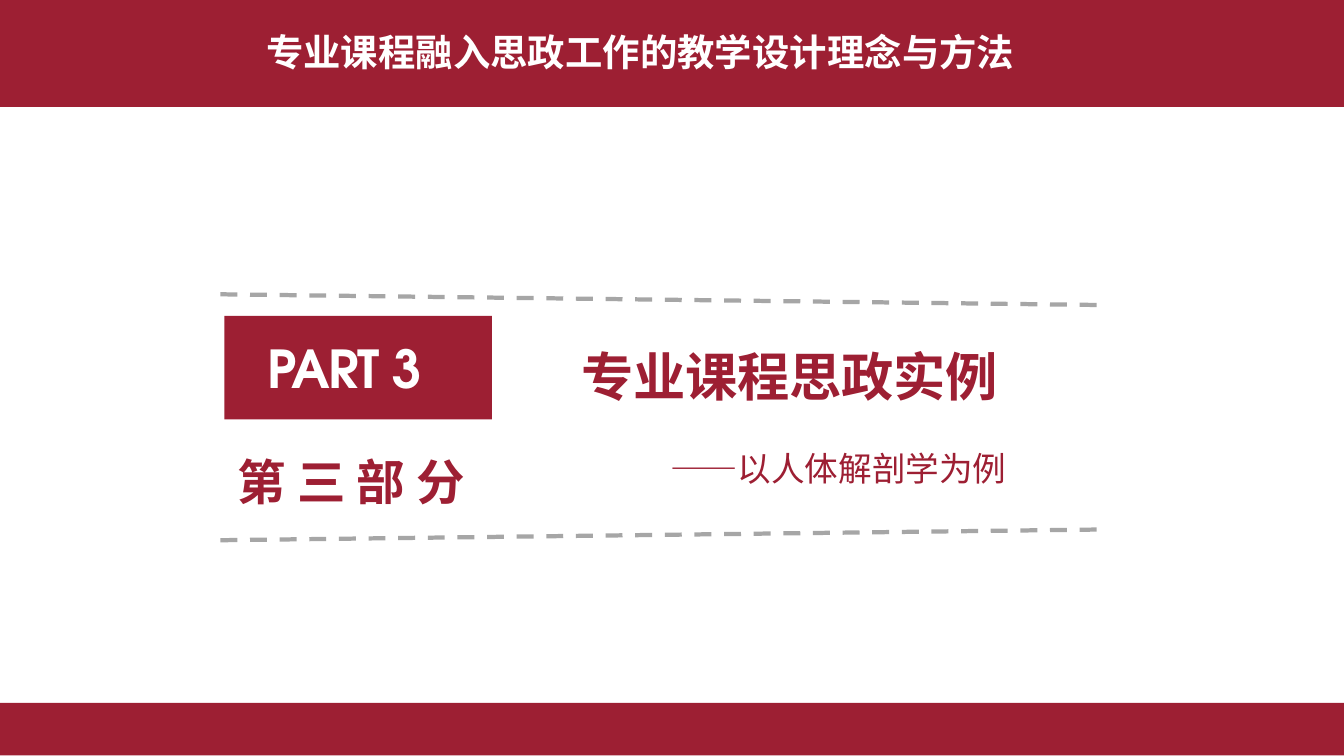
from dataclasses import dataclass

from lxml import etree
from pptx import Presentation
from pptx.dml.color import RGBColor
from pptx.enum.dml import MSO_LINE
from pptx.enum.shapes import MSO_CONNECTOR, MSO_SHAPE
from pptx.enum.text import MSO_ANCHOR, MSO_AUTO_SIZE, PP_ALIGN
from pptx.oxml.ns import qn
from pptx.util import Inches, Pt

DASH = MSO_LINE.DASH
STRAIGHT = MSO_CONNECTOR.STRAIGHT
RECTANGLE = MSO_SHAPE.RECTANGLE
TOP = MSO_ANCHOR.TOP
GROW = MSO_AUTO_SIZE.SHAPE_TO_FIT_TEXT
FIXED = MSO_AUTO_SIZE.NONE
LEFT = PP_ALIGN.LEFT
TITLE_ONLY = 5


@dataclass(frozen=True)
class Theme:
    """Colours, fonts and type sizes of the deck."""

    crimson: RGBColor = RGBColor(0x9D, 0x1F, 0x33)
    white: RGBColor = RGBColor(0xFF, 0xFF, 0xFF)
    grey: RGBColor = RGBColor(0xA6, 0xA6, 0xA6)
    chinese: str = "Noto Sans CJK SC"
    latin: str = "TeX Gyre Adventor"
    header: Pt = Pt(20)
    heading: Pt = Pt(28)
    section: Pt = Pt(26)
    subtitle: Pt = Pt(18)


THEME = Theme()


def apply_format(target, values):
    """Set each attribute of the target from a dict."""
    for name, value in values.items():
        setattr(target, name, value)


def place(shape, left, top, width, height):
    """Position and size a shape in inches."""
    sides = dict(left=left, top=top, width=width, height=height)
    apply_format(shape, {name: Inches(value) for name, value in sides.items()})


def add_band(page, top, height, outline=None):
    """Add a full-width crimson band, or only its outline."""
    band = page.shapes.add_shape(
        RECTANGLE, 0, Inches(top), Inches(10), Inches(height))
    band.shadow.inherit = False
    if outline:
        band.fill.background()
        band.line.color.rgb = THEME.crimson
        band.line.width = outline
    else:
        band.fill.solid()
        band.fill.fore_color.rgb = THEME.crimson
        band.line.fill.background()


def add_dashed_rule(page, start_y, end_y):
    """Add a slightly sloping dashed grey line."""
    rule = page.shapes.add_connector(
        STRAIGHT, Inches(1.64), Inches(start_y), Inches(8.2), Inches(end_y))
    rule.line.color.rgb = THEME.grey
    apply_format(rule.line, dict(width=Pt(2.28), dash_style=DASH))
    etree.SubElement(rule._element.spPr, qn("a:effectLst"))


def prepare_frame(frame, top_inset=0.01, sizing=GROW):
    """Give a text frame its insets, wrapping and anchor."""
    apply_format(frame, dict(
        margin_left=0, margin_right=0, margin_bottom=0,
        margin_top=Inches(top_inset), word_wrap=True,
        vertical_anchor=TOP, auto_size=sizing))


def write_line(para, spans, size, color, font=THEME.chinese, bold=True,
               indent=0.01, before=1):
    """Write (text, tracking) spans into one paragraph."""
    apply_format(para, dict(alignment=LEFT, space_before=Pt(before)))
    properties = para._p.get_or_add_pPr()
    properties.set("marL", str(Inches(indent)))
    properties.set("indent", "0")
    for text, tracking in spans:
        span = para.add_run()
        span.text = text
        apply_format(span.font, dict(name=font, size=size, bold=bold))
        span.font.color.rgb = color
        run_properties = span.font._element
        run_properties.set("spc", str(round(tracking * 100)))
        etree.SubElement(run_properties, qn("a:ea"), typeface=font)


def add_text(page, bounds):
    """Add a text box and return its frame."""
    box = page.shapes.add_textbox(0, 0, 0, 0)
    prepare_frame(box.text_frame)
    place(box, *bounds)
    return box.text_frame


def fill_title(page):
    """Turn the title placeholder into the crimson part label."""
    title = page.shapes.title
    place(title, 1.67, 2.35, 1.99, 0.77)
    title.fill.solid()
    title.fill.fore_color.rgb = THEME.crimson
    prepare_frame(title.text_frame, 0.15, FIXED)
    write_line(title.text_frame.paragraphs[0], [("PART ", -0.9), ("3", -0.1)],
               THEME.heading, THEME.white, THEME.latin,
               indent=0.32, before=10.5)


def main():
    """Build the section slide and save it."""
    deck = Presentation()
    width = Inches(10)
    apply_format(deck, dict(slide_width=width, slide_height=width * 9 // 16))
    page = deck.slides.add_slide(deck.slide_layouts[TITLE_ONLY])

    add_band(page, 5.23, 0.39)
    for outline in (None, Pt(2.04)):
        add_band(page, 0, 0.78, outline)
    add_dashed_rule(page, 4.02, 3.94)
    add_dashed_rule(page, 2.19, 2.27)
    fill_title(page)

    header = add_text(page, (1.97, 0.21, 5.59, 0.36))
    write_line(header.paragraphs[0],
               [("专业课程融入思政工作", 0), ("的", -0.1), ("教学", 0),
                ("设", -0.1), ("计理", 0), ("念", -0.1), ("与方法", 0)],
               THEME.header, THEME.white)

    section = add_text(page, (1.76, 3.35, 1.79, 0.46))
    write_line(section.paragraphs[0], [("第 三 部 分", 0)],
               THEME.section, THEME.crimson)

    topic = add_text(page, (4.32, 2.55, 3.23, 1.1))
    write_line(topic.paragraphs[0], [("专业课程思政实例", -0.1)],
               THEME.heading, THEME.crimson)
    write_line(topic.add_paragraph(), [("——", -0.1), ("以人体解剖学为例", 0)],
               THEME.subtitle, THEME.crimson, bold=False,
               indent=0.67, before=22.1)

    deck.save("out.pptx")


if __name__ == "__main__":
    main()
